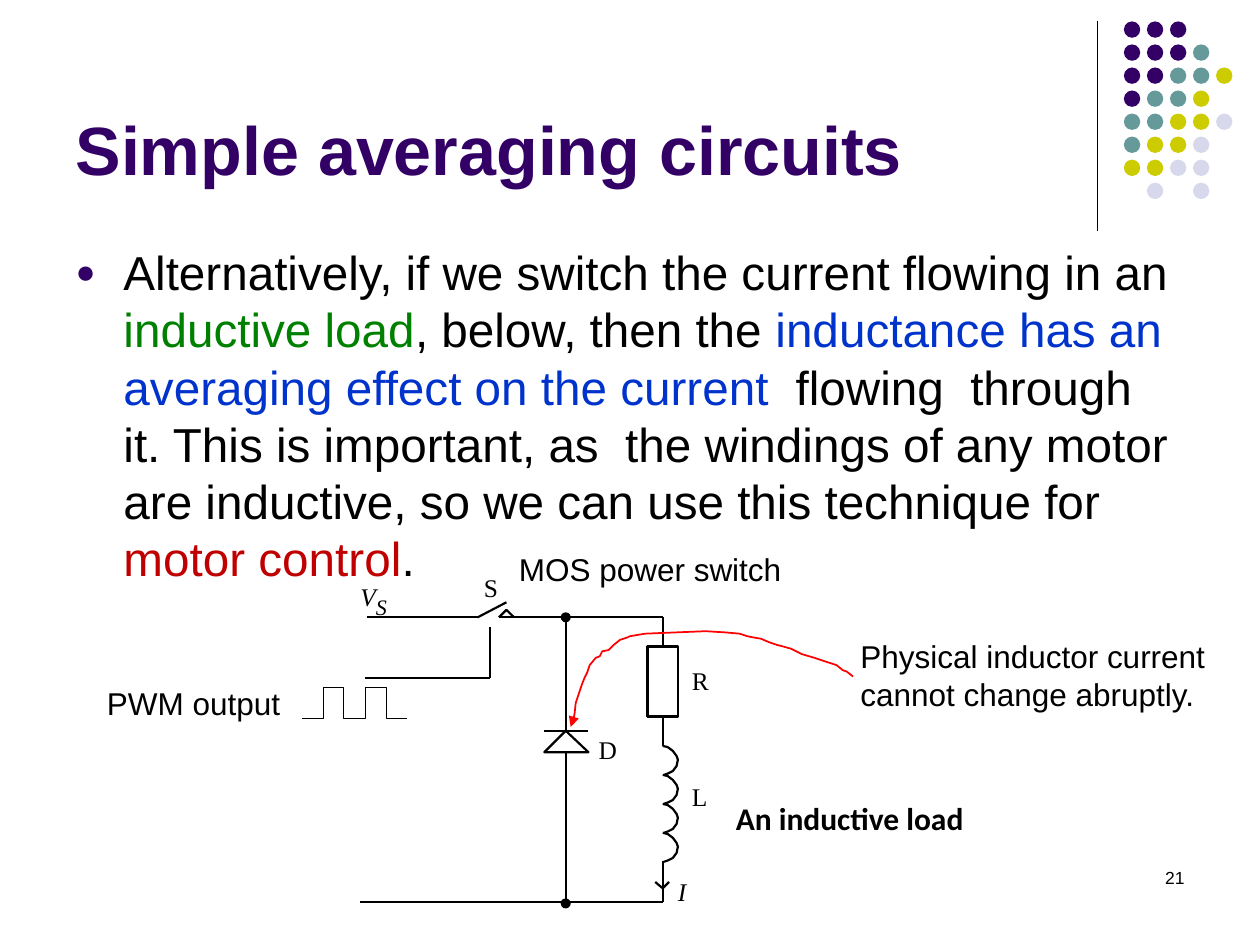
from lxml import etree
from pptx import Presentation
from pptx.dml.color import RGBColor
from pptx.enum.shapes import MSO_CONNECTOR as CONNECTOR, MSO_SHAPE as SHAPE
from pptx.enum.text import MSO_ANCHOR as ANCHOR, MSO_AUTO_SIZE as AUTO_SIZE, PP_ALIGN as ALIGN
from pptx.oxml.ns import qn
from pptx.util import Inches, Pt

BLACK = RGBColor(0, 0, 0)
PURPLE = RGBColor(0x33, 0x00, 0x66)
TEAL = RGBColor(0x66, 0x99, 0x99)
YELLOW = RGBColor(0xCC, 0xCC, 0x00)
LILAC = RGBColor(0xD8, 0xD8, 0xEC)
GREEN = RGBColor(0x00, 0x80, 0x00)
BLUE = RGBColor(0x00, 0x33, 0xCC)
DARK_RED = RGBColor(0xC0, 0x00, 0x00)
RED = RGBColor(0xFF, 0x00, 0x00)

TITLE = {"name": "Arial", "size": Pt(39), "bold": True}
BODY = {"name": "Arial", "size": Pt(27.2)}
CAPTION = {"name": "Arial", "size": Pt(18)}
LOAD_CAPTION = {"name": "Calibri", "size": Pt(18), "bold": True}
NUMBER = {"name": "Arial", "size": Pt(10)}
SYMBOL = {"name": "Times New Roman", "size": Pt(14.5)}
VARIABLE = {**SYMBOL, "italic": True}
SUBSCRIPT = {**VARIABLE, "size": Pt(21.8)}

DOT_COLORS = {"P": PURPLE, "T": TEAL, "Y": YELLOW, "L": LILAC}
DOT_ROWS = ["PPP", "PPPT", "PPTTY", "PTTY", "TTYYL", "TYYL", "YYLL", " L L"]

BODY_RUNS = [
    ("Alternatively, if we switch the current flowing in an ", BLACK),
    ("inductive load", GREEN),
    (", below, then the ", BLACK),
    ("inductance has an averaging effect on the current  ", BLUE),
    ("flowing  through  it. This is important, as  the windings of any motor "
     "are inductive, so we can use this technique for ", BLACK),
    ("motor control", DARK_RED),
    (".", BLACK),
]

# Straight wires: x1, y1, x2, y2
WIRES = [
    (2.91, 4.9, 3.79, 4.9), (3.79, 4.9, 4.02, 4.78), (3.96, 4.9, 5.26, 4.9),
    (2.9, 5.38, 3.89, 5.38), (3.89, 4.98, 3.89, 5.38),
    (4.49, 4.9, 4.49, 5.8), (4.32, 5.8, 4.67, 5.8), (4.49, 5.97, 4.49, 7.16),
    (5.26, 6.83, 5.26, 7.16), (2.86, 7.16, 5.26, 7.16),
]
SWITCH_CONTACT = [(3.96, 4.9), (4.02, 4.84), (4.08, 4.9)]
DIODE = [(4.32, 5.97), (4.49, 5.8), (4.67, 5.97)]
CURRENT_ARROW = [(5.2, 7), (5.26, 7.05), (5.31, 7)]
PULSES = [(2.4, 5.7), (2.57, 5.7), (2.57, 5.46), (2.73, 5.46), (2.73, 5.7),
          (2.9, 5.7), (2.9, 5.46), (3.07, 5.46), (3.07, 5.7), (3.23, 5.7)]
COIL_TURN = [(0, 0), (0.04, 0.01), (0.08, 0.04), (0.11, 0.08), (0.12, 0.11),
             (0.11, 0.16), (0.08, 0.2), (0.04, 0.22), (0.01, 0.23)]
POINTER = [
    (6.77, 5.37), (6.72, 5.33), (6.69, 5.32), (6.64, 5.28), (6.52, 5.24),
    (6.46, 5.22), (6.39, 5.2), (6.36, 5.19), (6.28, 5.15), (6.21, 5.13),
    (6.17, 5.12), (6.11, 5.1), (6.04, 5.07), (5.98, 5.06), (5.93, 5.05),
    (5.87, 5.03), (5.76, 5.02), (5.6, 5.01), (5.12, 5.03), (5, 5.05),
    (4.98, 5.06), (4.92, 5.08), (4.87, 5.12), (4.83, 5.16), (4.78, 5.17),
    (4.76, 5.21), (4.73, 5.22), (4.68, 5.28), (4.66, 5.34), (4.64, 5.38),
    (4.62, 5.43), (4.6, 5.49), (4.57, 5.58), (4.56, 5.67), (4.55, 5.71), (4.53, 5.77),
]


def add_run(paragraph, text, style, color=BLACK):
    run = paragraph.add_run()
    run.text = text
    for name, value in style.items():
        setattr(run.font, name, value)
    run.font.color.rgb = color
    return run


def add_text(slide, box, text, style, margins=True, wrap=True, align=ALIGN.LEFT):
    frame = slide.shapes.add_textbox(*map(Inches, box)).text_frame
    frame.word_wrap = wrap
    if not margins:
        for side in ("left", "top", "right", "bottom"):
            setattr(frame, f"margin_{side}", 0)
    paragraph = frame.paragraphs[0]
    paragraph.alignment = align
    add_run(paragraph, text, style)
    return frame


def add_wire(slide, x1, y1, x2, y2, width=1.25):
    wire = slide.shapes.add_connector(CONNECTOR.STRAIGHT, *map(Inches, (x1, y1, x2, y2)))
    wire.line.color.rgb = BLACK
    wire.line.width = Pt(width)
    etree.SubElement(wire._element.spPr, qn("a:effectLst"))
    return wire


def add_path(slide, points, width=1.25, color=BLACK, close=False):
    start, *rest = [(Inches(x), Inches(y)) for x, y in points]
    builder = slide.shapes.build_freeform(*start)
    builder.add_line_segments(rest, close=close)
    shape = builder.convert_to_shape()
    shape.fill.background()
    shape.line.color.rgb = color
    shape.line.width = Pt(width)
    shape.shadow.inherit = False
    return shape


def add_dot(slide, x, y, size, color):
    dot = slide.shapes.add_shape(SHAPE.OVAL, *map(Inches, (x, y, size, size)))
    dot.fill.solid()
    dot.fill.fore_color.rgb = color
    dot.line.fill.background()
    dot.shadow.inherit = False


def set_indent(paragraph, left, first=0):
    properties = paragraph._p.get_or_add_pPr()
    properties.set("marL", str(Inches(left)))
    properties.set("indent", str(Inches(first)))
    return properties


def place(shape, box):
    for name, value in zip(("left", "top", "width", "height"), box):
        setattr(shape, name, Inches(value))
    shape.text_frame.auto_size = AUTO_SIZE.NONE
    return shape.text_frame


def fill_placeholders(slide):
    title = place(slide.shapes.title, (0.5, 0.13, 8.25, 1.42))
    title.vertical_anchor = ANCHOR.BOTTOM
    title.paragraphs[0].alignment = ALIGN.LEFT
    add_run(title.paragraphs[0], "Simple averaging circuits", TITLE, PURPLE)

    paragraph = place(slide.placeholders[1], (0.5, 1.88, 9, 2.74)).paragraphs[0]
    paragraph.line_spacing = 1.0
    paragraph.space_before = Pt(2)
    properties = set_indent(paragraph, 0.38, -0.38)
    bullet_color = etree.SubElement(properties, qn("a:buClr"))
    etree.SubElement(bullet_color, qn("a:srgbClr"), val=str(PURPLE))
    etree.SubElement(properties, qn("a:buSzPct"), val="70000")
    etree.SubElement(properties, qn("a:buChar"), char="●")
    for text, color in BODY_RUNS:
        add_run(paragraph, text, BODY, color)


def add_decoration(slide):
    add_wire(slide, 8.71, 0.17, 8.71, 1.83, 0.75)
    pitch = 1.28 / 7
    for row, codes in enumerate(DOT_ROWS):
        for column, code in enumerate(codes):
            if code in DOT_COLORS:
                add_dot(slide, 8.92 + column * pitch, 0.17 + row * pitch, 0.13, DOT_COLORS[code])


def add_circuit(slide):
    for wire in WIRES:
        add_wire(slide, *wire)
    for points in (SWITCH_CONTACT, CURRENT_ARROW):
        add_path(slide, points)
    add_path(slide, DIODE, close=True)
    add_path(slide, PULSES, 0.62)
    for turn in range(4):
        top = 5.92 + turn * 0.23
        add_path(slide, [(5.26 + x, top + y) for x, y in COIL_TURN])
    for y in (4.9, 7.17):
        add_dot(slide, 4.45, y - 0.04, 0.08, BLACK)

    # Resistor with its two leads
    resistor = slide.shapes.add_shape(SHAPE.RECTANGLE, *map(Inches, (5.14, 5.13, 0.24, 0.56)))
    resistor.fill.background()
    resistor.line.color.rgb = BLACK
    resistor.line.width = Pt(1.5)
    resistor.shadow.inherit = False
    add_wire(slide, 5.26, 4.9, 5.26, 5.13).end_connect(resistor, 0)
    add_wire(slide, 5.26, 5.69, 5.26, 5.92).begin_connect(resistor, 2)


def add_labels(slide):
    # Component letters: text, left indent, space before, style
    frame = add_text(slide, (4.74, 5.28, 0.91, 1.88), "R", SYMBOL, margins=False)
    set_indent(frame.paragraphs[0], 0.75)
    for text, left, gap, style in [("D", 0.01, 22, SYMBOL), ("L", 0.75, 9.5, SYMBOL),
                                   ("I", 0.64, 36.5, VARIABLE)]:
        paragraph = frame.add_paragraph()
        paragraph.space_before = Pt(gap)
        set_indent(paragraph, left)
        add_run(paragraph, text, style)

    add_text(slide, (3.84, 4.54, 0.15, 0.23), "S", SYMBOL, margins=False)
    supply = add_text(slide, (2.86, 4.51, 0.25, 0.32), "V", VARIABLE, margins=False, wrap=False)
    subscript = add_run(supply.paragraphs[0], "S", SUBSCRIPT)
    subscript.font._element.set("baseline", "-25000")

    # Captions and slide number
    add_text(slide, (5.84, 6.34, 1.83, 0.28), "An inductive load", LOAD_CAPTION,
             margins=False, wrap=False)
    add_text(slide, (0.75, 5.38, 1.59, 0.4), "PWM output", CAPTION, wrap=False)
    add_text(slide, (4.02, 4.32, 2.31, 0.4), "MOS power switch", CAPTION, wrap=False)
    add_text(slide, (6.73, 5.01, 3.07, 0.71),
             "Physical inductor current cannot change abruptly.", CAPTION)
    add_text(slide, (7.17, 6.83, 2.33, 0.5), "21", NUMBER, align=ALIGN.RIGHT)

    # Red pointer to the diode
    pointer = add_path(slide, POINTER, 1, RED)
    etree.SubElement(pointer.line._get_or_add_ln(), qn("a:tailEnd"), type="triangle")


def main():
    presentation = Presentation()
    presentation.slide_width = Inches(10)
    presentation.slide_height = Inches(7.5)
    slide = presentation.slides.add_slide(presentation.slide_layouts[1])
    add_decoration(slide)
    fill_placeholders(slide)
    add_circuit(slide)
    add_labels(slide)
    presentation.save("out.pptx")


if __name__ == "__main__":
    main()
